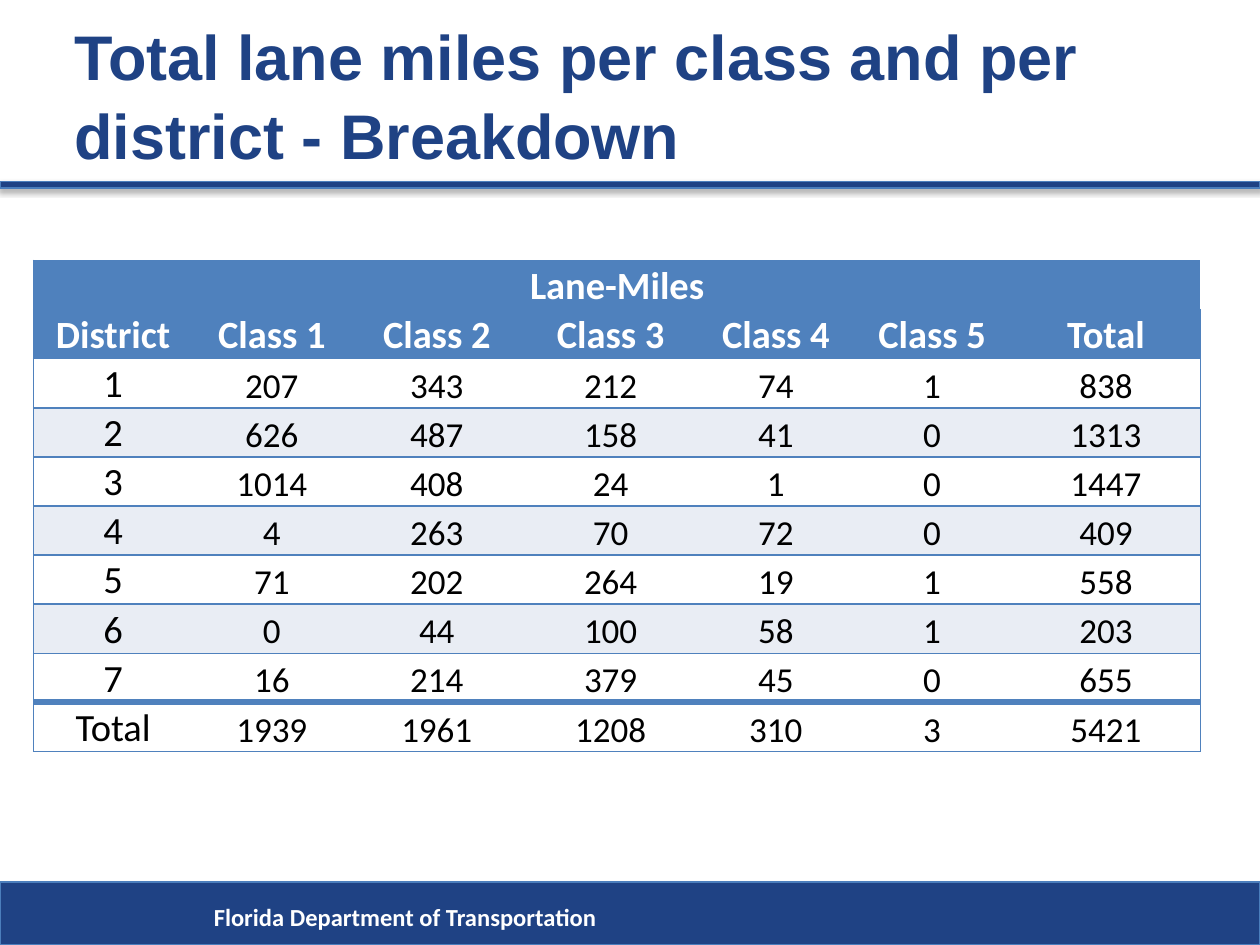
from lxml import etree
from pptx import Presentation
from pptx.dml.color import RGBColor
from pptx.enum.shapes import MSO_SHAPE
from pptx.enum.text import MSO_ANCHOR, PP_ALIGN
from pptx.oxml.ns import qn
from pptx.util import Cm, Pt

RECT = MSO_SHAPE.RECTANGLE
MID, LOW = MSO_ANCHOR.MIDDLE, MSO_ANCHOR.BOTTOM
CENTER = PP_ALIGN.CENTER

COLORS = {
    "navy": "1F4284", "edge": "4B7EBC", "blue": "4F81BD",
    "band": "E9EDF4", "white": "FFFFFF", "black": "000000",
}
PLAIN = "{2D5ABB26-0587-4C30-8999-92F81FD0307C}"  # no style, no grid

WIDTHS = [3.2, 3.2, 3.45, 3.56, 3.1, 3.2, 3.81]
ROW = 0.99
HEADS = ["District"] + [f"Class {n}" for n in range(1, 6)] + ["Total"]
MILES = [
    [1, 207, 343, 212, 74, 1, 838],
    [2, 626, 487, 158, 41, 0, 1313],
    [3, 1014, 408, 24, 1, 0, 1447],
    [4, 4, 263, 70, 72, 0, 409],
    [5, 71, 202, 264, 19, 1, 558],
    [6, 0, 44, 100, 58, 1, 203],
    [7, 16, 214, 379, 45, 0, 655],
    ["Total", 1939, 1961, 1208, 310, 3, 5421],
]


def rgb(name):
    return RGBColor.from_string(COLORS[name])


def style(para, face, size, color, bold):
    font = para.font
    font.name, font.size, font.bold = face, Pt(size), bold
    font.color.rgb = rgb(color)


def add_bar(slide, top, height):
    """Full-width bar with a soft shadow below it."""
    bar = slide.shapes.add_shape(RECT, 0, Cm(top), Cm(25.4), Cm(height))
    bar.fill.solid()
    bar.fill.fore_color.rgb = rgb("navy")
    bar.line.color.rgb = rgb("edge")
    bar.line.width = Pt(0.75)
    bar.shadow.inherit = False
    effects = bar.element.spPr.find(qn("a:effectLst"))
    shade = etree.SubElement(
        effects, qn("a:outerShdw"), blurRad=str(Pt(3.1)),
        dist=str(Pt(1.8)), dir="5400000", rotWithShape="0")
    tone = etree.SubElement(shade, qn("a:srgbClr"), val=COLORS["black"])
    etree.SubElement(tone, qn("a:alpha"), val="35000")


def add_text(slide, box, text, face, size, color):
    frame = slide.shapes.add_textbox(*map(Cm, box)).text_frame
    frame.word_wrap = True
    frame.vertical_anchor = MID
    para = frame.paragraphs[0]
    para.text = text
    style(para, face, size, color, True)
    return para


def add_edge(cell, side, width):
    line = etree.SubElement(
        cell._tc.get_or_add_tcPr(), qn(f"a:ln{side}"), w=str(Pt(width)))
    if width:
        fill = etree.SubElement(line, qn("a:solidFill"))
        etree.SubElement(fill, qn("a:srgbClr"), val=COLORS["blue"])
    else:
        etree.SubElement(line, qn("a:noFill"))


def fill_cell(cell, text, fill, size, color, bold):
    cell.fill.solid()
    cell.fill.fore_color.rgb = rgb(fill)
    cell.vertical_anchor = LOW
    cell.margin_left = cell.margin_right = 0
    cell.margin_top = cell.margin_bottom = 0
    para = cell.text_frame.paragraphs[0]
    para.text = str(text)
    para.alignment = CENTER
    style(para, "Calibri", size, color, bold)


def add_miles(slide):
    rows = [["Lane-Miles"] + [""] * (len(HEADS) - 1), HEADS] + MILES
    last, end = len(rows) - 1, len(HEADS) - 1
    frame = slide.shapes.add_table(
        len(rows), len(HEADS), Cm(0.68), Cm(5.25),
        Cm(sum(WIDTHS)), Cm(ROW * len(rows)))
    table = frame.table
    table._tbl.tblPr.find(qn("a:tableStyleId")).text = PLAIN
    for col, width in zip(table.columns, WIDTHS):
        col.width = Cm(width)

    for r, row in enumerate(rows):
        table.rows[r].height = Cm(ROW)
        head = r < 2
        fill = "blue" if head else "band" if r % 2 and r < last else "white"
        for c, text in enumerate(row):
            cell = table.cell(r, c)
            # Rules between rows and around the table, heavy above the total
            add_edge(cell, "L", 1 if c == 0 else 0)
            add_edge(cell, "R", 1 if c == end else 0)
            add_edge(cell, "T", 4 if r == last else 1)
            add_edge(cell, "B", 4 if r == last - 1 else 1)
            size = 22 if head or c == 0 else 20
            fill_cell(cell, text, fill, size,
                      "white" if head else "black", head)
    table.cell(0, 0).merge(table.cell(0, end))


def main():
    deck = Presentation()
    deck.slide_width, deck.slide_height = Cm(25.4), Cm(19.05)
    slide = deck.slides.add_slide(deck.slide_layouts[6])

    # Rule under the title and footer band
    add_bar(slide, 3.66, 0.13)
    add_bar(slide, 17.78, 1.27)
    add_text(slide, (4.06, 18.06, 20.27, 0.86),
             "Florida Department of Transportation", "Calibri", 14, "white")

    # Title
    title = add_text(slide, (1.25, 0.28, 22.86, 3.18),
                     "Total lane miles per class and per district - Breakdown",
                     "Arial", 36, "navy")
    title.line_spacing = 1.05

    # Lane miles by district and class
    add_miles(slide)
    deck.save("out.pptx")


if __name__ == "__main__":
    main()
